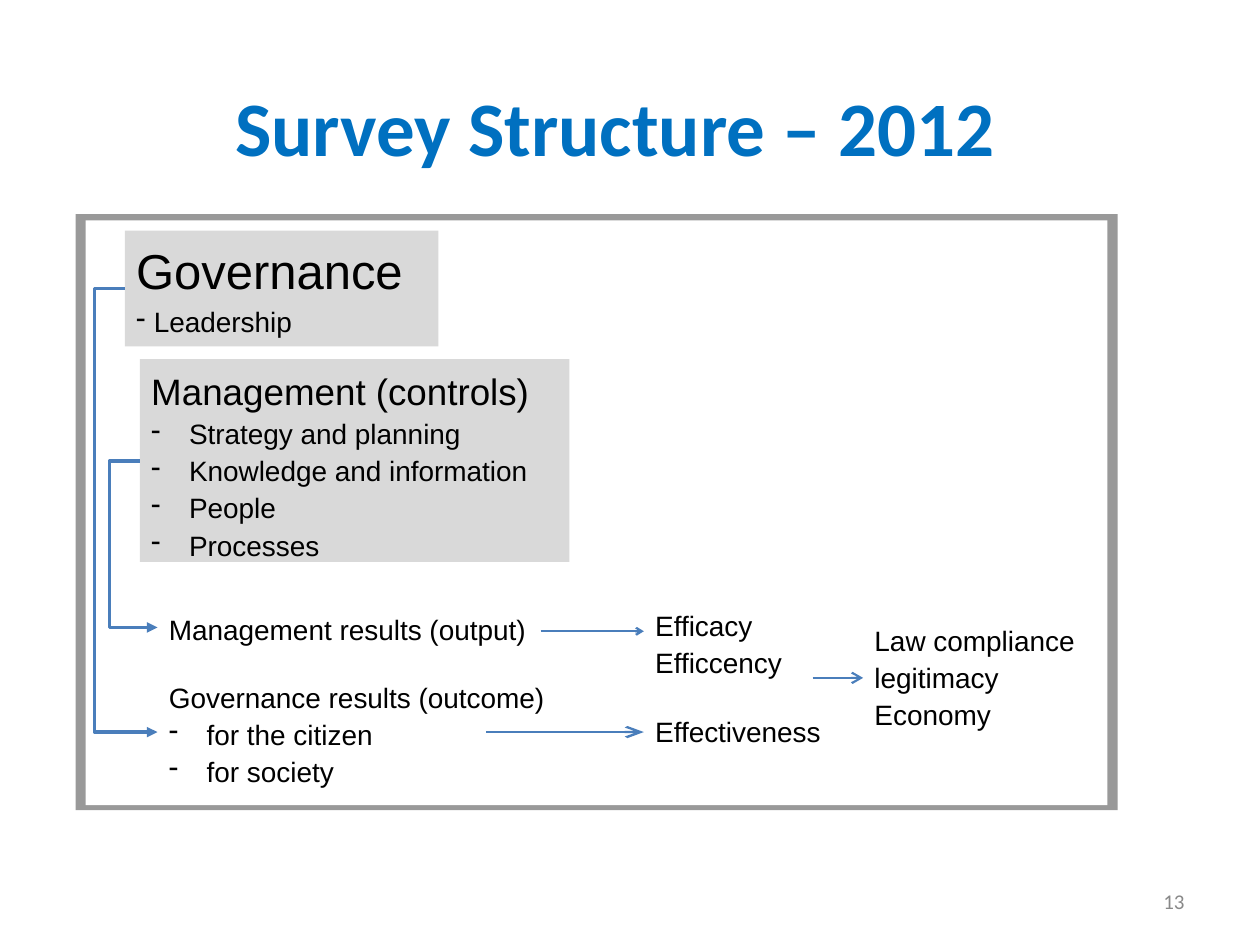
from lxml import etree
from pptx import Presentation
from pptx.dml.color import RGBColor
from pptx.enum.shapes import MSO_CONNECTOR, MSO_SHAPE
from pptx.enum.text import MSO_ANCHOR, PP_ALIGN
from pptx.oxml.ns import qn
from pptx.util import Inches, Pt

THEME = {
    "title": RGBColor(0x00, 0x70, 0xC0),
    "text": RGBColor(0, 0, 0),
    "number": RGBColor(0x89, 0x89, 0x89),
    "frame": RGBColor(0x99, 0x99, 0x99),
    "page": RGBColor(0xFF, 0xFF, 0xFF),
    "panel": RGBColor(0xD9, 0xD9, 0xD9),
    "arrow": RGBColor(0x4A, 0x7E, 0xBB),
    "heading_font": "Calibri",
    "body_font": "Arial",
    "title_size": Pt(44),
    "body_size": Pt(16),
    "number_size": Pt(12),
}


def write_lines(frame, lines, heading_size=THEME["body_size"], indent=0.3, gap=2):
    """Write lines into a text frame; those starting with '- ' become dashed items."""
    frame.vertical_anchor = MSO_ANCHOR.TOP
    for index, line in enumerate(lines):
        paragraph = frame.paragraphs[0] if index == 0 else frame.add_paragraph()
        paragraph.text = line.removeprefix("- ")
        paragraph.alignment = PP_ALIGN.LEFT
        if index:
            paragraph.space_before = Pt(gap)
        if line.startswith("- "):
            properties = paragraph._p.get_or_add_pPr()
            properties.set("marL", str(Inches(indent)))
            properties.set("indent", str(-Inches(indent)))
            etree.SubElement(properties, qn("a:buChar"), char="-")
        run_font = paragraph.runs[0].font
        run_font.name = THEME["body_font"]
        run_font.size = THEME["body_size"] if index else heading_size
        run_font.color.rgb = THEME["text"]


def style_arrow(arrow, width, head, head_width, head_length):
    """Colour a line and put an arrowhead at its end."""
    arrow.line.color.rgb = THEME["arrow"]
    arrow.line.width = Pt(width)
    etree.SubElement(arrow.line._get_or_add_ln(), qn("a:tailEnd"),
                     type=head, w=head_width, len=head_length)


prs = Presentation()
prs.slide_width, prs.slide_height = Inches(10), Inches(7.5)
slide = prs.slides.add_slide(prs.slide_layouts[5])
shapes = slide.shapes

# Title
title = shapes.title
title.left, title.top = Inches(0.2), Inches(0.52)
title.width, title.height = Inches(9.37), Inches(0.95)
title.text_frame.text = "Survey Structure – 2012"
title.text_frame.vertical_anchor = MSO_ANCHOR.MIDDLE
title.text_frame.paragraphs[0].alignment = PP_ALIGN.CENTER
title_font = title.text_frame.paragraphs[0].runs[0].font
title_font.name, title_font.size = THEME["heading_font"], THEME["title_size"]
title_font.bold = True
title_font.color.rgb = THEME["title"]

# Slide number
number = shapes.add_textbox(Inches(7.17), Inches(6.95), Inches(2.33), Inches(0.4))
number.text_frame.word_wrap = True
number.text_frame.text = "13"
number.text_frame.vertical_anchor = MSO_ANCHOR.MIDDLE
number.text_frame.paragraphs[0].alignment = PP_ALIGN.RIGHT
number_font = number.text_frame.paragraphs[0].runs[0].font
number_font.name, number_font.size = THEME["heading_font"], THEME["number_size"]
number_font.color.rgb = THEME["number"]

# Grey frame around a white area, then the two shaded panels
panels = [
    (0.6, 1.7, 8.27, 4.73, "frame", [], None, 0, 0),
    (0.68, 1.75, 8.11, 4.64, "page", [], None, 0, 0),
    (0.99, 1.83, 2.49, 0.92, "panel", ["Governance", "- Leadership"], Pt(28), 0.14, 3),
    (1.11, 2.85, 3.41, 1.61, "panel",
     ["Management (controls)", "- Strategy and planning", "- Knowledge and information",
      "- People", "- Processes"], Pt(21), 0.3, 2),
]
for left, top, width, height, fill, lines, heading_size, indent, gap in panels:
    panel = shapes.add_shape(MSO_SHAPE.RECTANGLE, Inches(left), Inches(top),
                             Inches(width), Inches(height))
    panel.shadow.inherit = False
    panel.fill.solid()
    panel.fill.fore_color.rgb = THEME[fill]
    panel.line.fill.background()
    frame = panel.text_frame
    frame.margin_left, frame.margin_top = Inches(0.09), Inches(0.08)
    frame.margin_right = frame.margin_bottom = 0
    write_lines(frame, lines, heading_size, indent, gap)

# Results and the criteria they are measured by
results = [
    (1.34, 4.86, 3.02, ["Management results (output)"]),
    (1.34, 5.4, 3.02, ["Governance results (outcome)", "- for the citizen", "- for society"]),
    (5.2, 4.83, 1.41, ["Efficacy", "Efficcency"]),
    (5.2, 5.67, 1.41, ["Effectiveness"]),
    (6.94, 4.95, 1.71, ["Law compliance", "legitimacy", "Economy"]),
]
for left, top, width, lines in results:
    result = shapes.add_textbox(Inches(left), Inches(top), Inches(width),
                                Inches(0.28 * len(lines)))
    frame = result.text_frame
    frame.margin_left = frame.margin_right = frame.margin_top = frame.margin_bottom = 0
    frame.word_wrap = False
    write_lines(frame, lines)

# Bent arrows from each panel down to its results
for panel_left, panel_middle, rail, result_middle in [
    (0.99, 2.29, 0.75, 5.81),
    (1.11, 3.66, 0.87, 4.98),
]:
    builder = shapes.build_freeform(Inches(panel_left), Inches(panel_middle))
    builder.add_line_segments(
        [(Inches(rail), Inches(panel_middle)), (Inches(rail), Inches(result_middle)),
         (Inches(1.25), Inches(result_middle))], close=False)
    bent_arrow = builder.convert_to_shape()
    bent_arrow.shadow.inherit = False
    bent_arrow.fill.background()
    style_arrow(bent_arrow, 2, "triangle", "med", "med")

# Straight arrows from results to criteria
for start, end, middle, head_width, head_length in [
    (4.29, 5.11, 5.01, "sm", "sm"),
    (3.86, 5.11, 5.81, "med", "lg"),
    (6.45, 6.85, 5.38, "med", "med"),
]:
    criteria_arrow = shapes.add_connector(MSO_CONNECTOR.STRAIGHT, Inches(start), Inches(middle),
                                          Inches(end), Inches(middle))
    style_arrow(criteria_arrow, 1.25, "arrow", head_width, head_length)
    etree.SubElement(criteria_arrow._element.spPr, qn("a:effectLst"))

prs.save("out.pptx")
